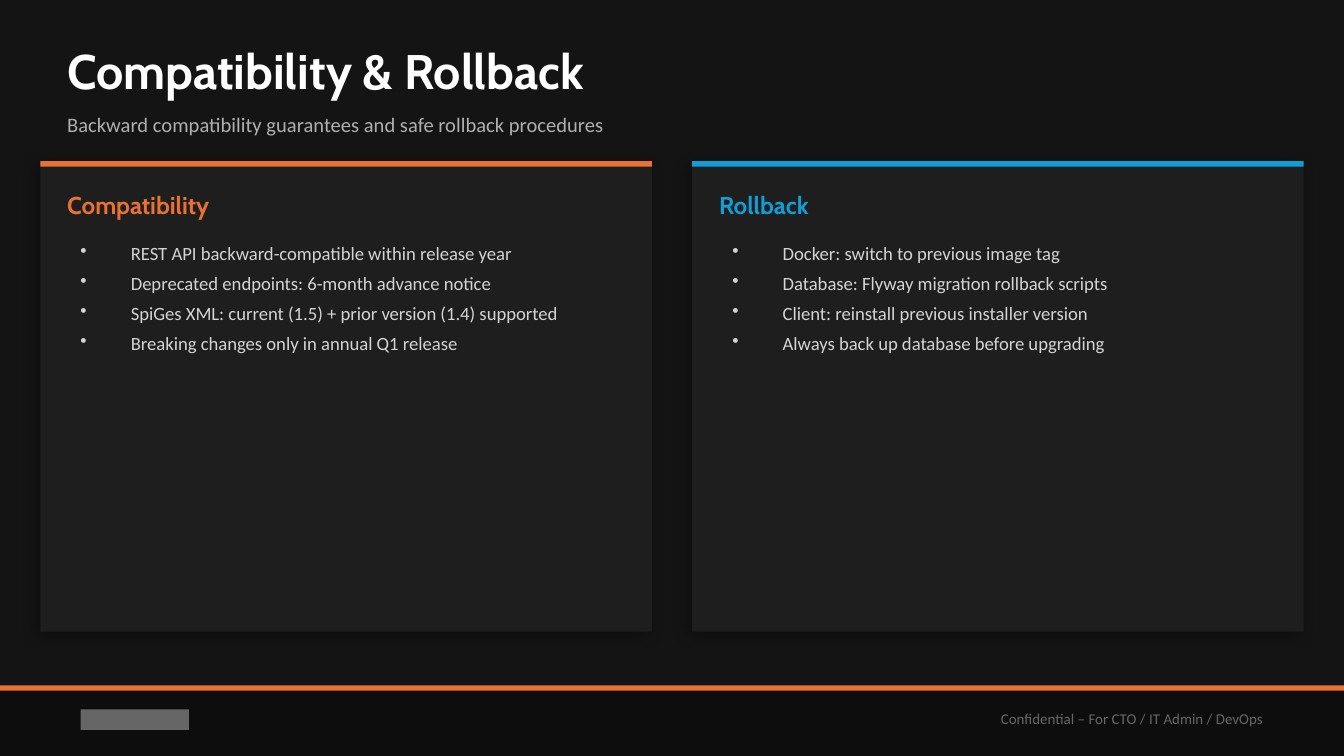
from pptx import Presentation
from pptx.dml.color import RGBColor as RGB
from pptx.enum.shapes import MSO_SHAPE as Kind
from pptx.enum.text import MSO_ANCHOR as Anchor, MSO_AUTO_SIZE as Fit, PP_ALIGN as Align
from pptx.oxml.ns import qn
from pptx.util import Pt
from lxml.etree import SubElement as Sub

HEAD, BODY = "Cabin", "Calibri"
ORANGE, BLUE, WHITE, GREY = "E97132", "0F9ED5", "FFFFFF", "666666"
WIDE, HIGH = 720, 405
BAR = 2.88  # thickness of the accent bars

CARDS = [
    ("Compatibility", ORANGE, [
        "REST API backward-compatible within release year",
        "Deprecated endpoints: 6-month advance notice",
        "SpiGes XML: current (1.5) + prior version (1.4) supported",
        "Breaking changes only in annual Q1 release",
    ]),
    ("Rollback", BLUE, [
        "Docker: switch to previous image tag",
        "Database: Flyway migration rollback scripts",
        "Client: reinstall previous installer version",
        "Always back up database before upgrading",
    ]),
]


def paint(fill, color):
    fill.solid()
    fill.fore_color.rgb = RGB.from_string(color)


def style(font, face, size, color, bold=False):
    font.name, font.size, font.bold = face, Pt(size), bold
    paint(font.fill, color)


def add_rect(slide, x, y, w, h, color):
    rect = slide.shapes.add_shape(Kind.RECTANGLE, Pt(x), Pt(y), Pt(w), Pt(h))
    rect.shadow.inherit = False
    paint(rect.fill, color)
    rect.line.fill.background()
    return rect


def add_shade(shape):
    """Cast a soft black shadow to the lower left."""
    effects = shape._element.spPr.find(qn("a:effectLst"))
    shade = Sub(effects, qn("a:outerShdw"), blurRad=str(Pt(8)), dist=str(Pt(3)),
                dir=str(135 * 60000), algn="bl", rotWithShape="0")
    black = Sub(shade, qn("a:srgbClr"), val="000000")
    Sub(black, qn("a:alpha"), val="35000")


def set_up(frame, anchor=Anchor.MIDDLE, inset=True):
    frame.word_wrap, frame.auto_size = True, Fit.NONE
    frame.vertical_anchor = anchor
    if not inset:
        frame.margin_left = frame.margin_right = 0
        frame.margin_top = frame.margin_bottom = 0


def add_box(slide, x, y, w, h, **setup):
    box = slide.shapes.add_textbox(Pt(x), Pt(y), Pt(w), Pt(h))
    set_up(box.text_frame, **setup)
    return box.text_frame


def add_line(slide, text, place, look, **setup):
    """Add a text box with one line in one style."""
    frame = add_box(slide, *place, **setup)
    frame.text = text
    style(frame.paragraphs[0].runs[0].font, *look)
    return frame


def add_list(slide, items, place):
    frame = add_box(slide, *place, anchor=Anchor.TOP)
    frame.text = "\n".join(items)
    for para in frame.paragraphs:
        props = para._p.get_or_add_pPr()
        props.set("marL", str(Pt(27)))
        props.set("indent", str(Pt(-27)))
        para.space_after = Pt(4)
        Sub(props, qn("a:buSzPct"), val="100000")
        Sub(props, qn("a:buChar"), char="•")
        style(para.runs[0].font, BODY, 10, "D4D4D4")


def add_title(slide, text):
    title = slide.shapes.title
    title.left, title.top, title.width, title.height = Pt(36), Pt(18), Pt(648), Pt(39.6)
    frame = title.text_frame
    frame.text = text
    set_up(frame, inset=False)
    para = frame.paragraphs[0]
    para.alignment = Align.LEFT
    style(para.runs[0].font, HEAD, 26, WHITE, True)


def add_card(slide, x, name, color, items):
    top, wide = 86.4, 327.6
    add_shade(add_rect(slide, x, top, wide, 252, "1E1E1E"))
    add_rect(slide, x, top, wide, BAR, color)
    left, span = x + 14.4, wide - 28.8
    add_line(slide, name, (left, 97.2, span, 25.2), (HEAD, 13, color, True), inset=False)
    add_list(slide, items, (left, 126, span, 201.6))


def add_footer(slide):
    top = 367.2
    add_rect(slide, 0, top, WIDE, HIGH - top, "0D0D0D")
    add_rect(slide, 0, top, WIDE, BAR, ORANGE)
    # Plain block on the left
    add_rect(slide, 43.2, 380, 58, 11, GREY)
    # Audience note on the right
    note = add_line(slide, "Confidential – For CTO / IT Admin / DevOps",
                    (396, 370.8, 288, 28.8), (BODY, 8, GREY))
    note.paragraphs[0].alignment = Align.RIGHT


def main():
    deck = Presentation()
    deck.slide_width, deck.slide_height = Pt(WIDE), Pt(HIGH)
    slide = deck.slides.add_slide(deck.slide_layouts[5])
    paint(slide.background.fill, "141414")
    add_footer(slide)
    # Heading
    add_title(slide, "Compatibility & Rollback")
    add_line(slide, "Backward compatibility guarantees and safe rollback procedures",
             (36, 54, 648, 25.2), (BODY, 11, "B0B0B0"), inset=False)
    # Two cards side by side
    for spot, card in enumerate(CARDS):
        add_card(slide, 21.6 + spot * 349.2, *card)
    deck.save("out.pptx")


if __name__ == "__main__":
    main()
